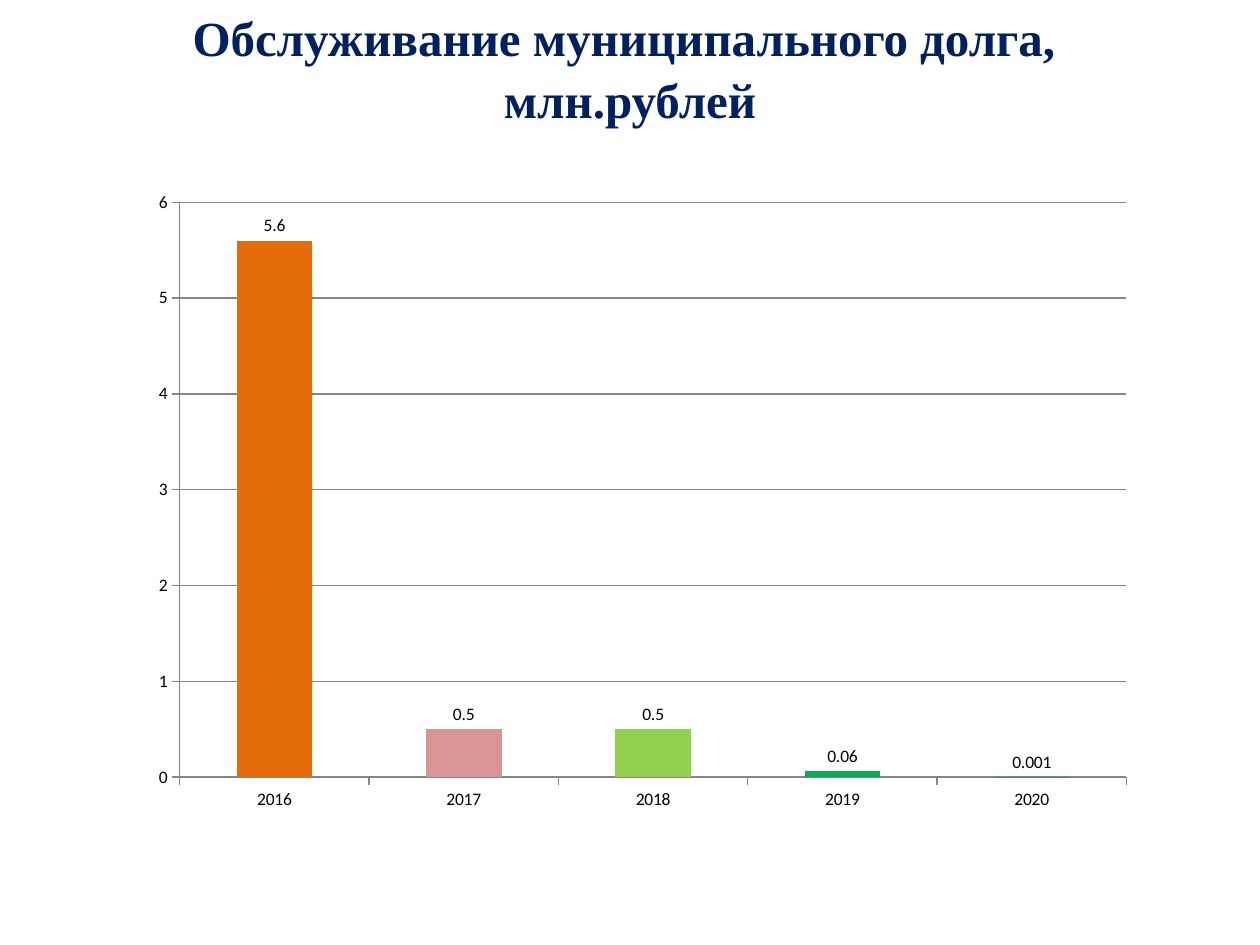
from pptx import Presentation
from pptx import util as u
from pptx.chart.data import CategoryChartData
from pptx.dml.color import RGBColor
from pptx.enum import chart as kinds, text

TITLE_LINES = ["Обслуживание муниципального долга, ", "млн.рублей"]
DEBT_COST = {
    "2016": (5.6, "E46C0A"),
    "2017": (0.5, "D99694"),
    "2018": (0.5, "92D050"),
    "2019": (0.06, "00B050"),
    "2020": (0.001, "31859C"),
}


def color(value):
    return RGBColor.from_string(value)


class SlideBuilder:
    title_font, title_color = "Times New Roman", "002060"
    chart_font, chart_color = "Calibri", "000000"
    axis_color, series_color = "868686", "4F81BD"

    def __init__(self, deck):
        self.deck = deck
        self.slide = deck.slides.add_slide(deck.slide_layouts[5])

    def place(self, left, top, width, height):
        across, down = self.deck.slide_width, self.deck.slide_height
        return (int(left * across), int(top * down),
                int(width * across), int(height * down))

    def title(self, lines, *shares):
        box = self.slide.shapes.title
        box.left, box.top, box.width, box.height = self.place(*shares)
        frame = box.text_frame
        frame.word_wrap = True
        frame.auto_size = text.MSO_AUTO_SIZE.NONE
        frame.vertical_anchor = text.MSO_ANCHOR.MIDDLE
        for index, line in enumerate(lines):
            para = frame.add_paragraph() if index else frame.paragraphs[0]
            para.alignment = text.PP_ALIGN.CENTER
            para.line_spacing = 1.05
            span = para.add_run()
            span.text = line
            span.font.name = self.title_font
            span.font.size = u.Pt(28)
            span.font.bold = True
            span.font.color.rgb = color(self.title_color)

    def axis(self, axis):
        axis.major_tick_mark = kinds.XL_TICK_MARK.OUTSIDE
        axis.minor_tick_mark = kinds.XL_TICK_MARK.NONE
        self.line(axis.format.line)

    def line(self, line):
        line.color.rgb = color(self.axis_color)
        line.width = u.Pt(0.75)

    def columns(self, points, *shares):
        data = CategoryChartData()
        data.categories = list(points)
        data.add_series("Series 1", [value for value, _ in points.values()])
        chart = self.slide.shapes.add_chart(
            kinds.XL_CHART_TYPE.COLUMN_CLUSTERED, *self.place(*shares), data).chart
        chart.has_legend = False
        chart.has_title = False
        chart.font.name = self.chart_font
        chart.font.size = u.Pt(10)
        chart.font.color.rgb = color(self.chart_color)

        self.axis(chart.category_axis)
        self.axis(chart.value_axis)
        scale = chart.value_axis
        scale.minimum_scale, scale.maximum_scale, scale.major_unit = 0, 6, 1
        scale.has_major_gridlines = True
        self.line(scale.major_gridlines.format.line)

        plot = chart.plots[0]
        plot.vary_by_categories = False
        plot.gap_width = 150
        plot.has_data_labels = True
        plot.data_labels.show_value = True
        plot.data_labels.position = kinds.XL_LABEL_POSITION.OUTSIDE_END
        series = plot.series[0]
        series.format.fill.solid()
        series.format.fill.fore_color.rgb = color(self.series_color)
        for index, (_, shade) in enumerate(points.values()):
            fill = series.points[index].format.fill
            fill.solid()
            fill.fore_color.rgb = color(shade)


def main():
    deck = Presentation()
    deck.slide_width, deck.slide_height = u.Inches(10), u.Inches(7.5)
    builder = SlideBuilder(deck)
    builder.title(TITLE_LINES, 0, 0, 1, 0.14)
    builder.columns(DEBT_COST, 0.11, 0.19, 0.8, 0.68)
    deck.save("out.pptx")


if __name__ == "__main__":
    main()
